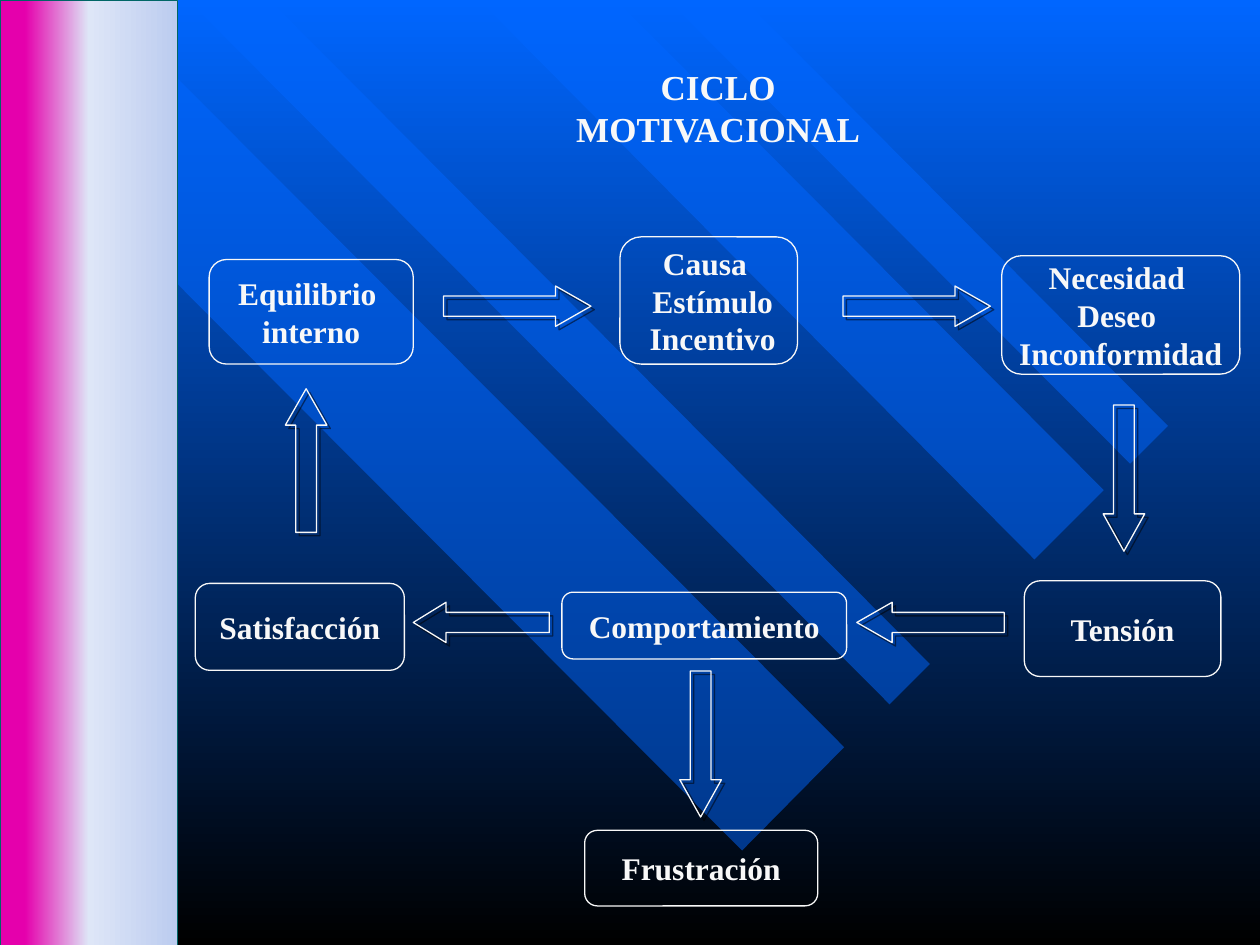
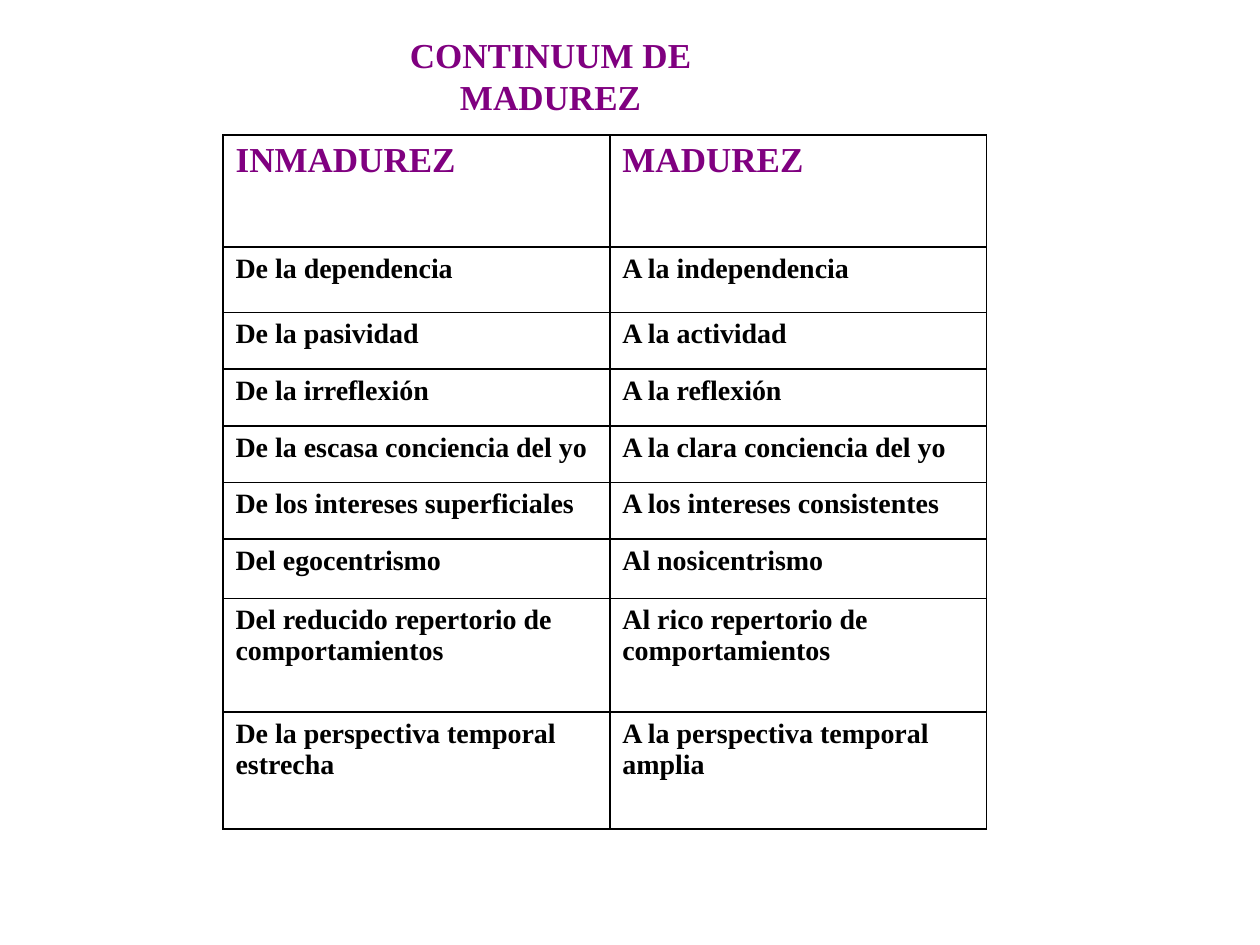
from lxml.etree import SubElement
from pptx import Presentation
from pptx.dml.color import RGBColor
from pptx.enum.shapes import MSO_SHAPE
from pptx.enum.text import MSO_ANCHOR, PP_ALIGN
from pptx.oxml import parse_xml
from pptx.oxml.ns import nsdecls, qn
from pptx.util import Inches, Pt

COLORS = {
    "blue": "0066FF",
    "black": "000000",
    "white": "FFFFFF",
    "light": "F8F8F8",
    "purple": "800080",
    "magenta": "E500AC",
    "mist": "DEE6F7",
    "sky": "BCCCEF",
    "teal": "006666",
}
COLUMNS, ROWS = 100, 75
FONT = "Times New Roman"


def rgb(name):
    return RGBColor.from_string(COLORS[name])


def write(frame, text, size=18, color="light", align=PP_ALIGN.CENTER, anchor=MSO_ANCHOR.MIDDLE, wrap=False):
    frame.word_wrap = wrap
    frame.vertical_anchor = anchor
    for index, line in enumerate(text.split("\n")):
        para = frame.paragraphs[0] if index == 0 else frame.add_paragraph()
        para.alignment = align
        span = para.add_run()
        span.text = line
        span.font.name = FONT
        span.font.size = Pt(size)
        span.font.bold = True
        span.font.color.rgb = rgb(color)


class Deck:
    def __init__(self):
        self.deck = Presentation()
        self.deck.slide_width = Inches(10)
        self.deck.slide_height = Inches(7.5)
        self.page = None

    def across(self, columns):
        return round(self.deck.slide_width * columns / COLUMNS)

    def down(self, rows):
        return round(self.deck.slide_height * rows / ROWS)

    def place(self, left, top, width, height):
        return self.across(left), self.down(top), self.across(width), self.down(height)

    def add_page(self):
        self.page = self.deck.slides.add_slide(self.deck.slide_layouts[5])

    def gradient(self, fill, element, stops, angle):
        fill.gradient()
        fill.gradient_angle = angle
        stop_list = next(element.iter(qn("a:gsLst")))
        stop_list.clear()
        for position, color in stops:
            stop = SubElement(stop_list, qn("a:gs"), pos=str(position * 1000))
            SubElement(stop, qn("a:srgbClr"), val=COLORS[color])

    def background(self, stops):
        self.gradient(self.page.background.fill, self.page.element, stops, 270)

    def title(self, text, area, color):
        title = self.page.shapes.title
        title.left, title.top, title.width, title.height = self.place(*area)
        write(title.text_frame, text, size=20, color=color)
        title.element.getparent().append(title.element)

    def stripe(self, points):
        corners = [(self.across(x), self.down(y)) for x, y in points]
        builder = self.page.shapes.build_freeform(*corners[0], scale=1.0)
        builder.add_line_segments(corners[1:], close=True)
        stripe = builder.convert_to_shape()
        stripe.shadow.inherit = False
        stripe.fill.solid()
        stripe.fill.fore_color.rgb = rgb("blue")
        stripe.line.fill.background()
        SubElement(next(stripe.element.spPr.iter(qn("a:srgbClr"))), qn("a:alpha"), val="50000")

    def shape(self, kind, area, line="light", weight=0.75):
        shape = self.page.shapes.add_shape(kind, *self.place(*area))
        shape.shadow.inherit = False
        shape.fill.background()
        shape.line.color.rgb = rgb(line)
        shape.line.width = Pt(weight)
        return shape

    def band(self, area, stops):
        band = self.shape(MSO_SHAPE.RECTANGLE, area, "teal", 0.25)
        self.gradient(band.fill, band.element, stops, 0)

    def box(self, text, area):
        box = self.shape(MSO_SHAPE.ROUNDED_RECTANGLE, area)
        write(box.text_frame, text)

    def arrow(self, area, rotation, head):
        arrow = self.shape(MSO_SHAPE.RIGHT_ARROW, area)
        arrow.adjustments[1] = head
        arrow.rotation = rotation
        effects = arrow.element.spPr.find(qn("a:effectLst"))
        shadow = SubElement(effects, qn("a:outerShdw"), dist=str(Pt(2.8)), dir="2700000", algn="ctr", rotWithShape="0")
        color = SubElement(shadow, qn("a:srgbClr"), val=COLORS["black"])
        SubElement(color, qn("a:alpha"), val="50000")

    def border(self, cell):
        properties = cell._tc.get_or_add_tcPr()
        for index, side in enumerate("LRTB"):
            properties.insert(index, parse_xml(
                f'<a:ln{side} {nsdecls("a")} w="{Pt(1)}"><a:solidFill>'
                f'<a:srgbClr val="{COLORS["black"]}"/></a:solidFill></a:ln{side}>'))

    def table(self, rows, left, top, widths, heights):
        area = self.place(left, top, sum(widths), sum(heights))
        table = self.page.shapes.add_table(len(rows), len(widths), *area).table
        table.first_row = table.horz_banding = False
        for column, width in zip(table.columns, widths):
            column.width = self.across(width)
        for index, (row, height, texts) in enumerate(zip(table.rows, heights, rows)):
            row.height = self.down(height)
            size, color = (16, "black") if index else (20, "purple")
            for cell, text in zip(row.cells, texts):
                cell.fill.solid()
                cell.fill.fore_color.rgb = rgb("white")
                self.border(cell)
                write(cell.text_frame, text, size, color, PP_ALIGN.LEFT, MSO_ANCHOR.TOP, True)
                cell.vertical_anchor = MSO_ANCHOR.TOP


STRIPES = [
    [(67, 59.3), (7.9, 0), (0, 0), (0, 8.4), (58.9, 67.5)],
    [(21.4, 0), (73.8, 52.7), (70.6, 55.9), (14.9, 0)],
    [(48.9, 0), (87.6, 38.9), (82.1, 44.4), (38, 0)],
    [(53, 0), (89.7, 36.8), (92.7, 33.8), (59.1, 0)],
]
ARROWS = [
    ((35.2, 22.7, 11.7, 3.2), 0, 0.875),
    ((66.9, 22.7, 11.7, 3.2), 0, 0.875),
    ((83.4, 36.3, 11.6, 3.3), 90, 0.897),
    ((68, 47.8, 11.7, 3.2), 180, 0.875),
    ((32.8, 47.8, 10.8, 3.2), 180, 0.812),
    ((18.6, 34.9, 11.4, 3.3), 270, 0.875),
    ((49.8, 57.4, 11.6, 3.3), 90, 0.897),
]
STAGES = [
    ("Equilibrio \ninterno", (16.6, 20.6, 16.2, 8.3)),
    ("Causa \n Estímulo\n Incentivo", (49.2, 18.8, 14.1, 10.1)),
    ("Necesidad \nDeseo \nInconformidad", (79.5, 20.3, 18.9, 9.4)),
    ("Tensión", (81.3, 46.1, 15.6, 7.6)),
    ("Comportamiento", (44.6, 47, 22.6, 5.3)),
    ("Satisfacción", (15.5, 46.3, 16.6, 6.9)),
    ("Frustración", (46.4, 65.9, 18.5, 6)),
]
MATURITY = [
    ("INMADUREZ", "MADUREZ"),
    ("De la dependencia", "A la independencia"),
    ("De la pasividad", "A la actividad"),
    ("De la irreflexión", "A la reflexión"),
    ("De la escasa conciencia del yo", "A la clara conciencia del yo"),
    ("De los intereses superficiales", "A los intereses consistentes"),
    ("Del egocentrismo", "Al nosicentrismo"),
    ("Del reducido repertorio de comportamientos", "Al rico repertorio de comportamientos"),
    ("De la perspectiva temporal estrecha", "A la perspectiva temporal amplia"),
]


def main():
    show = Deck()

    show.add_page()
    show.background([(0, "blue"), (100, "black")])
    for points in STRIPES:
        show.stripe(points)
    show.title("CICLO MOTIVACIONAL", (42.1, 5.4, 29.8, 6.3), "light")
    for area, rotation, head in ARROWS:
        show.arrow(area, rotation, head)
    for text, area in STAGES:
        show.box(text, area)
    show.band((0, 0, 14.1, ROWS), [(14, "magenta"), (50, "mist"), (100, "sky")])

    show.add_page()
    show.title("CONTINUUM DE MADUREZ", (24, 3.6, 39.4, 4.8), "purple")
    show.table(MATURITY, 17.7, 10.7, [30.7, 29.9], [8.9, 5.2, *[4.5] * 4, 4.7, 9, 9.3])

    show.deck.save("out.pptx")


if __name__ == "__main__":
    main()
